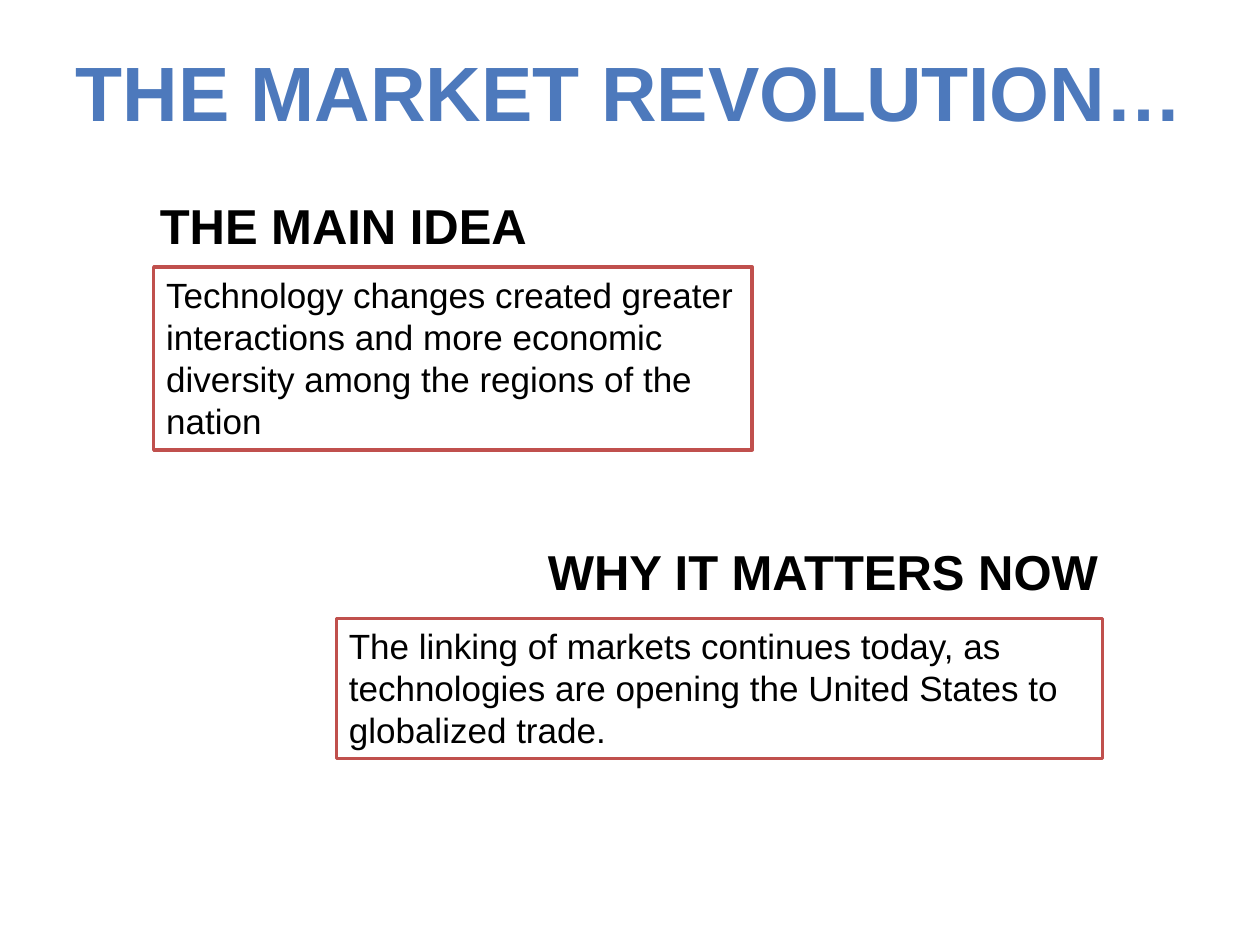
from dataclasses import dataclass

from pptx import Presentation
from pptx.dml.color import RGBColor
from pptx.enum.shapes import MSO_SHAPE
from pptx.enum.text import MSO_ANCHOR, MSO_AUTO_SIZE, PP_ALIGN
from pptx.util import Inches, Pt

RECTANGLE = MSO_SHAPE.RECTANGLE
TOP = MSO_ANCHOR.TOP
NO_AUTOFIT = MSO_AUTO_SIZE.NONE
LEFT, CENTER = PP_ALIGN.LEFT, PP_ALIGN.CENTER


@dataclass(frozen=True)
class Theme:
    font: str = "Arial"
    title_color: RGBColor = RGBColor(0x4D, 0x79, 0xBC)
    text_color: RGBColor = RGBColor(0, 0, 0)
    box_fill: RGBColor = RGBColor(0xFF, 0xFF, 0xFF)
    box_line: RGBColor = RGBColor(0xC0, 0x50, 0x4D)
    title_size: Pt = Pt(44)
    heading_size: Pt = Pt(28)
    body_size: Pt = Pt(20)
    line_width: Pt = Pt(2)


theme = Theme()


def write_text(shape, text, size, color, bold=False, alignment=LEFT):
    frame = shape.text_frame
    frame.word_wrap = True
    frame.auto_size = NO_AUTOFIT
    frame.vertical_anchor = TOP
    frame.text = text
    paragraph = frame.paragraphs[0]
    paragraph.alignment = alignment
    paragraph.font.name = theme.font
    paragraph.font.size = size
    paragraph.font.bold = bold
    paragraph.font.color.rgb = color


presentation = Presentation()
presentation.slide_width = Inches(10)
presentation.slide_height = Inches(7.5)
slide = presentation.slides.add_slide(presentation.slide_layouts[5])

# Title, without side margins so that it stays on one line
title = slide.shapes.title
title.left, title.top = Inches(0.5), Inches(0.3)
title.width, title.height = Inches(9), Inches(1.25)
write_text(title, "THE MARKET REVOLUTION…", theme.title_size,
           theme.title_color, bold=True, alignment=CENTER)
title.text_frame.margin_left = title.text_frame.margin_right = Inches(0)

# Sections: heading with its place, then boxed statement with its place
sections = [
    ("THE MAIN IDEA", (1.17, 1.5, 3.58, 0.57),
     "Technology changes created greater interactions and more economic "
     "diversity among the regions of the nation", (1.22, 2.12, 4.75, 1.45)),
    ("WHY IT MATTERS NOW", (4.25, 4.25, 4.67, 0.57),
     "The linking of markets continues today, as technologies are opening "
     "the United States to globalized trade.", (2.67, 4.91, 6.08, 1.11)),
]
for heading_text, heading_place, statement, box_place in sections:
    heading = slide.shapes.add_textbox(*map(Inches, heading_place))
    write_text(heading, heading_text, theme.heading_size,
               theme.text_color, bold=True)

    box = slide.shapes.add_shape(RECTANGLE, *map(Inches, box_place))
    box.shadow.inherit = False
    box.fill.solid()
    box.fill.fore_color.rgb = theme.box_fill
    box.line.color.rgb = theme.box_line
    box.line.width = theme.line_width
    write_text(box, statement, theme.body_size, theme.text_color)

presentation.save("out.pptx")
